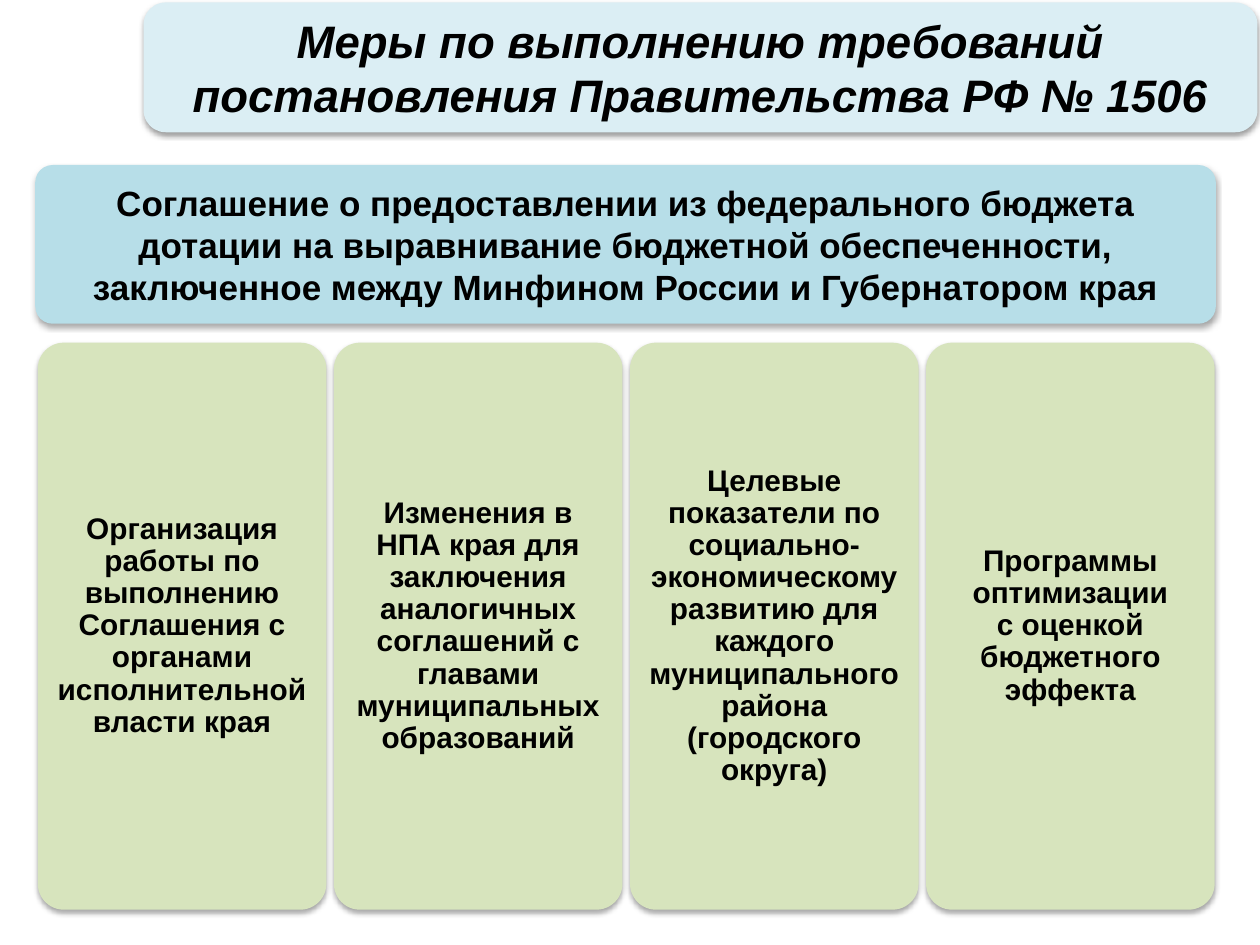
from lxml.etree import SubElement
from pptx import Presentation
from pptx.dml.color import RGBColor
from pptx.enum.shapes import MSO_SHAPE
from pptx.enum.text import MSO_ANCHOR, PP_ALIGN
from pptx.oxml import parse_xml
from pptx.oxml.ns import nsdecls, qn
from pptx.util import Inches, Pt

COLORS = {"title": "DBEEF4", "deal": "B7DEE8", "card": "D7E4BD", "ink": "000000"}

# Card grid, in inches
LEFT, TOP, WIDE, HIGH, STEP = 0.3, 2.72, 2.29, 4.5, 2.35

TITLE = "Меры по выполнению требований постановления Правительства РФ № 1506"
DEAL = ("Соглашение о предоставлении из федерального бюджета дотации "
        "на выравнивание бюджетной обеспеченности, заключенное между "
        "Минфином России и Губернатором края")
# \v marks a line break inside a paragraph
CARDS = [
    "Организация работы по выполнению Соглашения с органами "
    "исполнительной\vвласти края",
    "Изменения в НПА края для заключения аналогичных соглашений "
    "с главами муниципальных образований",
    "Целевые показатели по социально-экономическому развитию "
    "для каждого муниципального района (городского округа)",
    "Программы оптимизации\vс оценкой бюджетного эффекта",
]


def add_shade(shape, dist, alpha):
    """Soft shadow straight below the shape."""
    shape.shadow.inherit = False
    effects = shape._element.spPr.find(qn("a:effectLst"))
    shade = SubElement(effects, qn("a:outerShdw"), blurRad=str(Pt(3.1)),
                       dist=str(Pt(dist)), dir="5400000", rotWithShape="0")
    tint = SubElement(shade, qn("a:srgbClr"), val=COLORS["ink"])
    SubElement(tint, qn("a:alpha"), val=str(alpha * 1000))


def add_panel(slide, box, fill, text, size, bend, pads, dist=1.8, alpha=35):
    """Rounded panel with centred bold text; returns its paragraph."""
    shape = slide.shapes.add_shape(MSO_SHAPE.ROUNDED_RECTANGLE, *map(Inches, box))
    shape.adjustments[0] = bend
    shape.fill.solid()
    shape.fill.fore_color.rgb = RGBColor.from_string(COLORS[fill])
    shape.line.fill.background()
    add_shade(shape, dist, alpha)

    frame = shape.text_frame
    frame.word_wrap = True
    frame.vertical_anchor = MSO_ANCHOR.MIDDLE
    frame.margin_left = frame.margin_right = Inches(pads[0])
    frame.margin_top = frame.margin_bottom = Inches(pads[1])
    frame.text = text
    para = frame.paragraphs[0]
    para.alignment = PP_ALIGN.CENTER
    for run in para.runs:
        run.font.name = "Arial"
        run.font.size = Pt(size)
        run.font.bold = True
        run.font.color.rgb = RGBColor.from_string(COLORS["ink"])
    return para


def add_title(slide):
    para = add_panel(slide, (1.14, 0.02, 8.84, 1.03), "title", TITLE, 26,
                     0.17, (0, 0), dist=1.6, alpha=38)
    for run in para.runs:
        run.font.italic = True
        # Thin outline around the letters
        edge = parse_xml(f'<a:ln {nsdecls("a")} w="{Pt(0.75)}"><a:solidFill>'
                         f'<a:srgbClr val="{COLORS["ink"]}"/></a:solidFill></a:ln>')
        run.font._element.insert(0, edge)


def add_cards(slide):
    for col, text in enumerate(CARDS):
        box = (LEFT + col * STEP, TOP, WIDE, HIGH)
        para = add_panel(slide, box, "card", text, 17, 0.09, (0.07, 0.07))
        para.line_spacing = 0.9


def main():
    deck = Presentation()
    deck.slide_width, deck.slide_height = Inches(10), Inches(7.5)
    slide = deck.slides.add_slide(deck.slide_layouts[6])
    # Heading
    add_title(slide)
    # Four measures
    add_cards(slide)
    # Agreement banner
    add_panel(slide, (0.28, 1.31, 9.37, 1.26), "deal", DEAL, 20, 0.11, (0.1, 0.05))
    deck.save("out.pptx")


if __name__ == "__main__":
    main()
